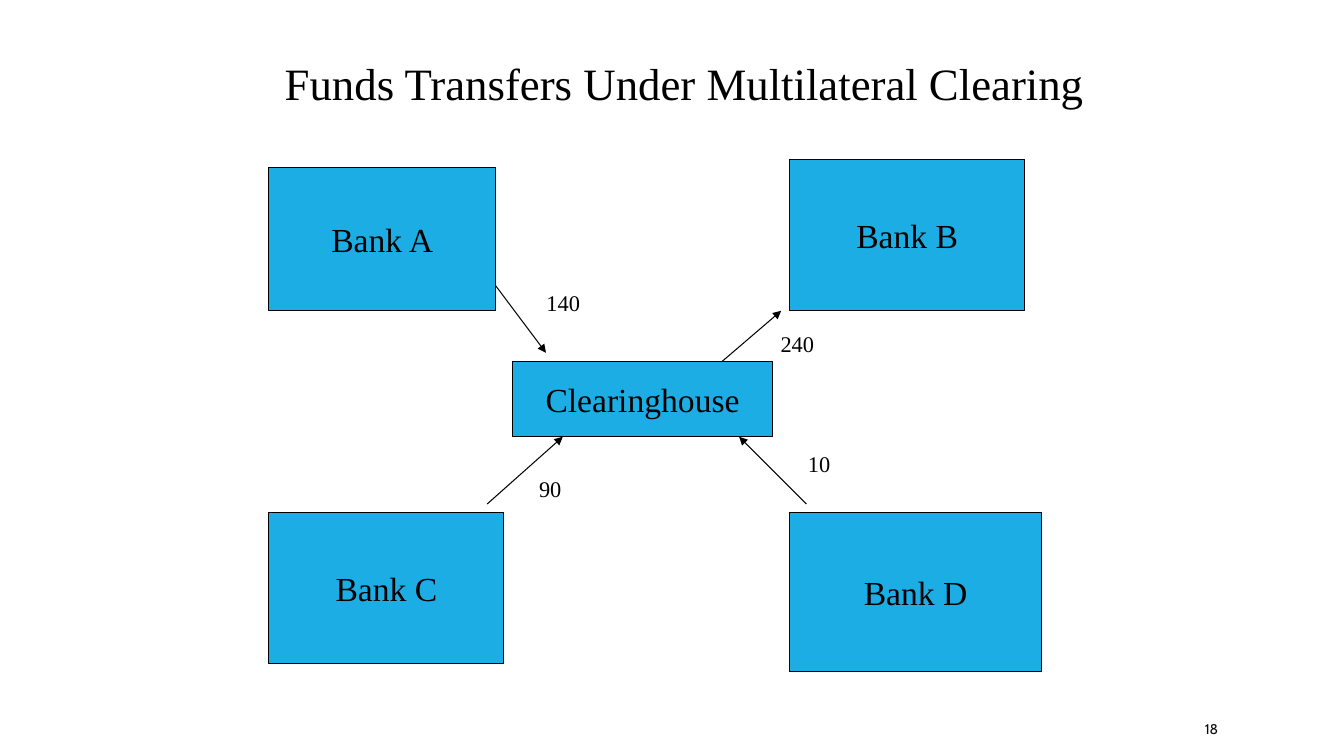
from pptx import Presentation, util as u
from pptx.dml.color import RGBColor
from pptx.enum import shapes, text
from pptx.oxml.ns import qn
from lxml import etree

PX = 9525  # EMU per px, 96 px to the inch
BLACK = RGBColor(0x00, 0x00, 0x00)
GREY = RGBColor(0x0D, 0x0D, 0x0D)
BLUE = RGBColor(0x1C, 0xAD, 0xE4)

deck = Presentation()
deck.slide_width, deck.slide_height = 1280 * PX, 720 * PX
page = deck.slides.add_slide(deck.slide_layouts[6])


def write(box, words, size, font="Times New Roman", color=BLACK,
          align=text.PP_ALIGN.LEFT, anchor=text.MSO_ANCHOR.TOP, wrap=True):
    frame = box.text_frame
    frame.word_wrap = wrap
    frame.vertical_anchor = anchor
    para = frame.paragraphs[0]
    para.alignment = align
    span = para.add_run()
    span.text = words
    span.font.size = u.Pt(size)
    span.font.name = font
    span.font.color.rgb = color


# Title
title = page.shapes.add_textbox(240 * PX, 48 * PX, 824 * PX, 60 * PX)
write(title, "Funds Transfers Under Multilateral Clearing", 32,
      align=text.PP_ALIGN.CENTER)

# Banks around the clearinghouse
for name, *place in [
    ("Bank A", 256, 160, 216, 136),
    ("Bank B", 752, 152, 224, 144),
    ("Bank C", 256, 488, 224, 144),
    ("Bank D", 752, 488, 240, 152),
    ("Clearinghouse", 488, 344, 248, 72),
]:
    box = page.shapes.add_shape(shapes.MSO_SHAPE.RECTANGLE,
                                *[length * PX for length in place])
    box.shadow.inherit = False
    box.fill.solid()
    box.fill.fore_color.rgb = BLUE
    box.line.color.rgb = BLACK
    box.line.width = u.Pt(0.75)
    write(box, name, 24, align=text.PP_ALIGN.CENTER,
          anchor=text.MSO_ANCHOR.MIDDLE, wrap=False)

# Transfers: arrow from start to end
for ends in [
    (472, 272, 520, 336),
    (464, 480, 536, 416),
    (688, 344, 744, 296),
    (768, 480, 704, 416),
]:
    arrow = page.shapes.add_connector(shapes.MSO_CONNECTOR.STRAIGHT,
                                      *[length * PX for length in ends])
    arrow.line.color.rgb = BLACK
    arrow.line.width = u.Pt(0.75)
    outline = arrow.line._get_or_add_ln()
    etree.SubElement(outline, qn("a:tailEnd"), type="triangle")
    etree.SubElement(arrow._element.spPr, qn("a:effectLst"))

# Amounts beside the arrows
for amount, left, top, width, wrap in [
    ("140", 511, 271, 51, False),
    ("240", 734, 310, 52, False),
    ("90", 504, 448, 88, True),
    ("10", 760, 424, 64, True),
]:
    label = page.shapes.add_textbox(left * PX, top * PX, width * PX, 36 * PX)
    write(label, amount, 16, wrap=wrap)

# Page number
number = page.shapes.add_textbox(1138 * PX, 680 * PX, 102 * PX, 29 * PX)
write(number, "18", 10, font="Cabin", color=GREY,
      anchor=text.MSO_ANCHOR.MIDDLE)

deck.save("out.pptx")
